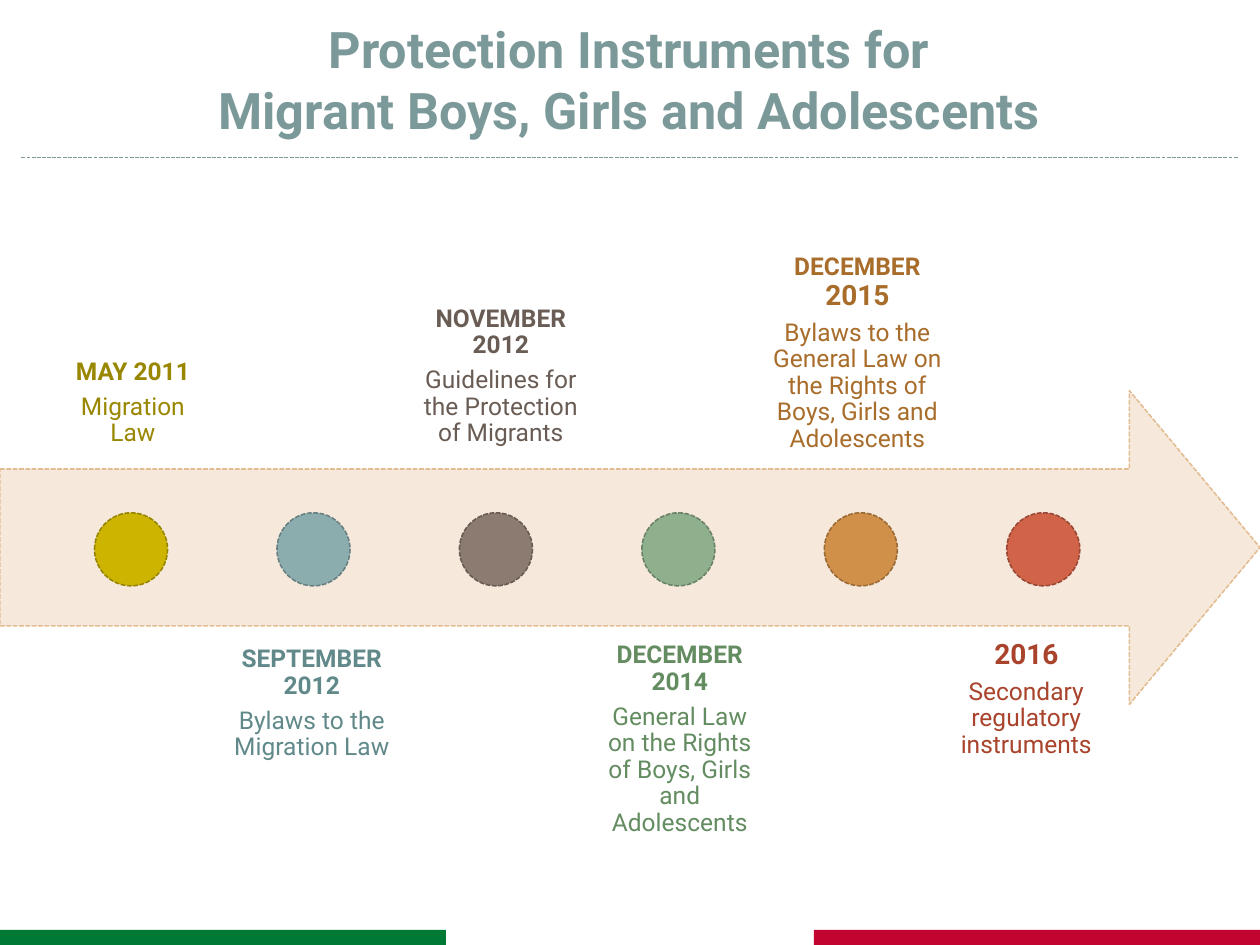
from lxml import etree
from pptx import Presentation
from pptx.dml.color import RGBColor
from pptx.enum.dml import MSO_LINE
from pptx.enum.shapes import MSO_CONNECTOR, MSO_SHAPE
from pptx.enum.text import MSO_ANCHOR, PP_ALIGN
from pptx.oxml.ns import qn
from pptx.util import Inches, Pt

DASH = MSO_LINE.SQUARE_DOT
STRAIGHT = MSO_CONNECTOR.STRAIGHT
RECTANGLE = MSO_SHAPE.RECTANGLE
ARROW = MSO_SHAPE.RIGHT_ARROW
OVAL = MSO_SHAPE.OVAL
TOP, MIDDLE, BOTTOM = MSO_ANCHOR.TOP, MSO_ANCHOR.MIDDLE, MSO_ANCHOR.BOTTOM
CENTER = PP_ALIGN.CENTER

FONT = "Roboto"
TITLE_COLOR = "7C999A"
DOT_SIZE = 0.58
DOT_TOP = 4.07
FIRST_DOT, LAST_DOT = 0.75, 7.99

EVENTS = [
    {"date": [("MAY 2011", 14)], "name": "Migration Law",
     "box": (0.35, 3.04, 1.41, 0.6), "anchor": BOTTOM,
     "text": "998700", "fill": "CCB400", "line": "978500"},
    {"date": [("SEPTEMBER 2012", 14)], "name": "Bylaws to the Migration Law",
     "box": (1.61, 5.04, 1.73, 1.39), "anchor": TOP,
     "text": "61898A", "fill": "8CADAE", "line": "688081"},
    {"date": [("NOVEMBER 2012", 14)],
     "name": "Guidelines for the Protection of Migrants",
     "box": (3.27, 2.88, 1.41, 0.76), "anchor": BOTTOM,
     "text": "695C54", "fill": "8C7B70", "line": "685B53"},
    {"date": [("DECEMBER 2014", 14)],
     "name": "General Law on the Rights of Boys, Girls and Adolescents",
     "box": (4.69, 5.01, 1.41, 0.6), "anchor": TOP,
     "text": "648C61", "fill": "8FB08C", "line": "6A8268"},
    {"date": [("DECEMBER ", 14), ("2015", 16)],
     "name": "Bylaws to the General Law on the Rights of Boys, Girls and Adolescents",
     "box": (5.94, 3.04, 1.73, 0.64), "anchor": BOTTOM,
     "text": "A96D2B", "fill": "D19049", "line": "9B6B36"},
    {"date": [("2016", 16)], "name": "Secondary regulatory instruments",
     "box": (7.44, 4.99, 1.41, 1.33), "anchor": TOP,
     "text": "A9432B", "fill": "D16349", "line": "9B4936"},
]


def color(value):
    return RGBColor.from_string(value)


def lengths(box):
    return [Inches(value) for value in box]


def apply(target, values):
    for name, value in values.items():
        setattr(target, name, value)


def set_line(line, value, width):
    line.color.rgb = color(value)
    apply(line, {"width": Pt(width), "dash_style": DASH})


def add_shape(page, kind, box, fill, line=None):
    shape = page.shapes.add_shape(kind, *lengths(box))
    shape.shadow.inherit = False
    shape.fill.solid()
    shape.fill.fore_color.rgb = color(fill)
    if line:
        set_line(shape.line, line, 0.9)
    else:
        shape.line.fill.background()
    return shape


def add_frame(page, box, anchor, margin):
    frame = page.shapes.add_textbox(*lengths(box)).text_frame
    sides = ("left", "top", "right", "bottom")
    apply(frame, {"word_wrap": True, "vertical_anchor": anchor})
    apply(frame, {f"margin_{side}": Inches(margin) for side in sides})
    return frame


def add_span(para, text, size, value, bold):
    span = para.add_run()
    span.text = text
    apply(span.font, {"name": FONT, "size": Pt(size), "bold": bold})
    span.font.color.rgb = color(value)


def draw_title(page, box):
    para = add_frame(page, box, MIDDLE, 0.05).paragraphs[0]
    para.alignment = CENTER
    add_span(para, "Protection Instruments for", 28.8, TITLE_COLOR, True)
    para.add_line_break()
    add_span(para, "Migrant Boys, Girls and Adolescents", 28.8, TITLE_COLOR, True)


def draw_rule(page, left, right, top):
    rule = page.shapes.add_connector(STRAIGHT, *lengths((left, top, right, top)))
    set_line(rule.line, TITLE_COLOR, 0.75)
    etree.SubElement(rule._element.spPr, qn("a:effectLst"))


def draw_footer(page, box):
    left, top, width, height = box
    band = 3.54
    add_shape(page, RECTANGLE, (left, top, band, height), "007935")
    add_shape(page, RECTANGLE, (left + width - band, top, band, height), "C20430")


def draw_arrow(page, box):
    arrow = add_shape(page, ARROW, box, "F6E9DB", "E3BC92")
    arrow.adjustments[0] = 0.5
    arrow.adjustments[1] = 0.416


def draw_label(page, event):
    frame = add_frame(page, event["box"], event["anchor"], 0.09)
    date, name = frame.paragraphs[0], frame.add_paragraph()
    for para in (date, name):
        apply(para, {"alignment": CENTER, "line_spacing": 0.9, "space_after": Pt(5)})
    for text, size in event["date"]:
        add_span(date, text, size, event["text"], True)
    add_span(name, event["name"], 14, event["text"], False)


def draw_timeline(page, box):
    draw_arrow(page, box)
    step = (LAST_DOT - FIRST_DOT) / (len(EVENTS) - 1)
    for index, event in enumerate(EVENTS):
        draw_label(page, event)
        dot = (FIRST_DOT + index * step, DOT_TOP, DOT_SIZE, DOT_SIZE)
        add_shape(page, OVAL, dot, event["fill"], event["line"])


def main():
    deck = Presentation()
    apply(deck, {"slide_width": Inches(10), "slide_height": Inches(7.5)})
    page = deck.slides.add_slide(deck.slide_layouts[6])
    draw_footer(page, (0, 7.38, 10, 0.12))
    draw_rule(page, 0.17, 9.83, 1.25)
    draw_timeline(page, (0, 3.1, 10, 2.49))
    draw_title(page, (0.33, 0.21, 9.33, 0.83))
    deck.save("out.pptx")


if __name__ == "__main__":
    main()
